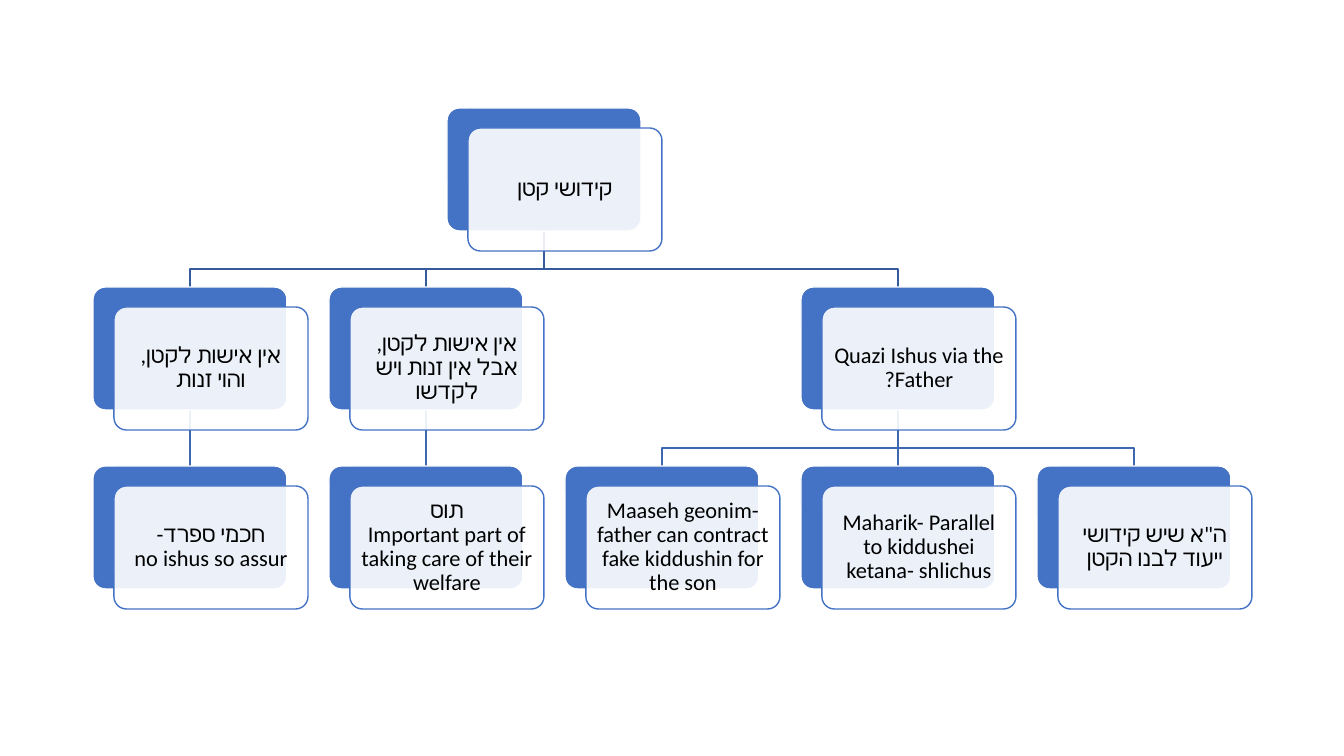
from lxml.etree import SubElement
from pptx import Presentation
from pptx.dml.color import RGBColor
from pptx.enum.shapes import MSO_CONNECTOR, MSO_SHAPE
from pptx.enum.text import MSO_ANCHOR, PP_ALIGN
from pptx.oxml.ns import qn
from pptx.util import Pt

SCALE = 914400 / 100.8  # EMU in one px


def px(n):
    return round(n * SCALE)


def paint(part, tint):
    part.solid()
    part.fore_color.rgb = RGBColor.from_string(tint)


deck = Presentation()
deck.slide_width, deck.slide_height = px(1344), px(756)
slide = deck.slides.add_slide(deck.slide_layouts[6])
shapes = slide.shapes

# Grid of the tree
LEFT, TOP, COL, ROW = 93, 108, 236, 179
WIDE, HIGH, BEND = 194, 123, 38
SHIFT_X, SHIFT_Y = 21, 20

# Format values
FRAME = {"word_wrap": True, "vertical_anchor": MSO_ANCHOR.MIDDLE,
         "margin_left": px(7), "margin_right": px(7),
         "margin_top": px(7), "margin_bottom": px(7)}
PARA = {"alignment": PP_ALIGN.CENTER, "line_spacing": 0.9}
FONT = {"size": Pt(16), "name": "Calibri"}

# Column, row and text of each node
nodes = [
    (1.5, 0, "קידושי קטן"),
    (0, 1, "אין אישות לקטן, והוי זנות"),
    (0, 2, "חכמי ספרד-\vno ishus so assur"),
    (1, 1, "אין אישות לקטן, אבל אין זנות ויש לקדשו"),
    (1, 2, "תוס\vImportant part of taking care of their welfare"),
    (3, 1, "Quazi Ishus via the Father?"),
    (2, 2, "Maaseh geonim- father can contract fake kiddushin for the son"),
    (3, 2, "Maharik- Parallel to kiddushei ketana- shlichus"),
    (4, 2, "ה\"א שיש קידושי ייעוד לבנו הקטן"),
]

# Parent row, parent column and child columns
links = [(1, 3, (4, 3, 2)), (1, 1, (1,)), (1, 0, (0,)), (0, 1.5, (3, 1, 0))]
tints = ["365B9D", "3E67B2"]

# Lines, behind the cards
for row, col, kids in links:
    start = LEFT + col * COL + WIDE // 2
    top = TOP + row * ROW + HIGH
    end = TOP + (row + 1) * ROW
    for kid in kids:
        goal = LEFT + kid * COL + WIDE // 2
        if kid == col:
            link = shapes.add_connector(MSO_CONNECTOR.STRAIGHT, px(start), px(top),
                                        px(goal), px(end))
            SubElement(link._element.spPr, qn("a:effectLst"))
        else:
            pen = shapes.build_freeform(start, top, SCALE)
            pen.add_line_segments([(start, top + BEND), (goal, top + BEND),
                                   (goal, end)], close=False)
            link = pen.convert_to_shape()
            link.shadow.inherit = False
            link.fill.background()
        paint(link.line.fill, tints[row])
        link.line.width = Pt(1)

# Cards: a blue back and a pale front with the text
for col, row, text in nodes:
    x, y = LEFT + col * COL, TOP + row * ROW
    for dx, dy, fill, edge in ((0, 0, "4472C4", "FFFFFF"),
                               (SHIFT_X, SHIFT_Y, "FFFFFF", "4472C4")):
        card = shapes.add_shape(MSO_SHAPE.ROUNDED_RECTANGLE, px(x + dx), px(y + dy),
                                px(WIDE), px(HIGH))
        card.adjustments[0] = 0.1
        card.shadow.inherit = False
        paint(card.fill, fill)
        paint(card.line.fill, edge)
        card.line.width = Pt(1)

    # The front card lets a tenth of the back show through
    tone = card._element.spPr.find(qn("a:solidFill"))[0]
    SubElement(tone, qn("a:alpha"), val="90000")

    frame = card.text_frame
    for key, value in FRAME.items():
        setattr(frame, key, value)
    para = frame.paragraphs[0]
    para.text = text
    for key, value in PARA.items():
        setattr(para, key, value)
    para._p.get_or_add_pPr().set("rtl", "1")
    for run in para.runs:
        for key, value in FONT.items():
            setattr(run.font, key, value)
        paint(run.font.fill, "000000")
        SubElement(run._r.rPr, qn("a:cs"), typeface=FONT["name"])

deck.save("out.pptx")
